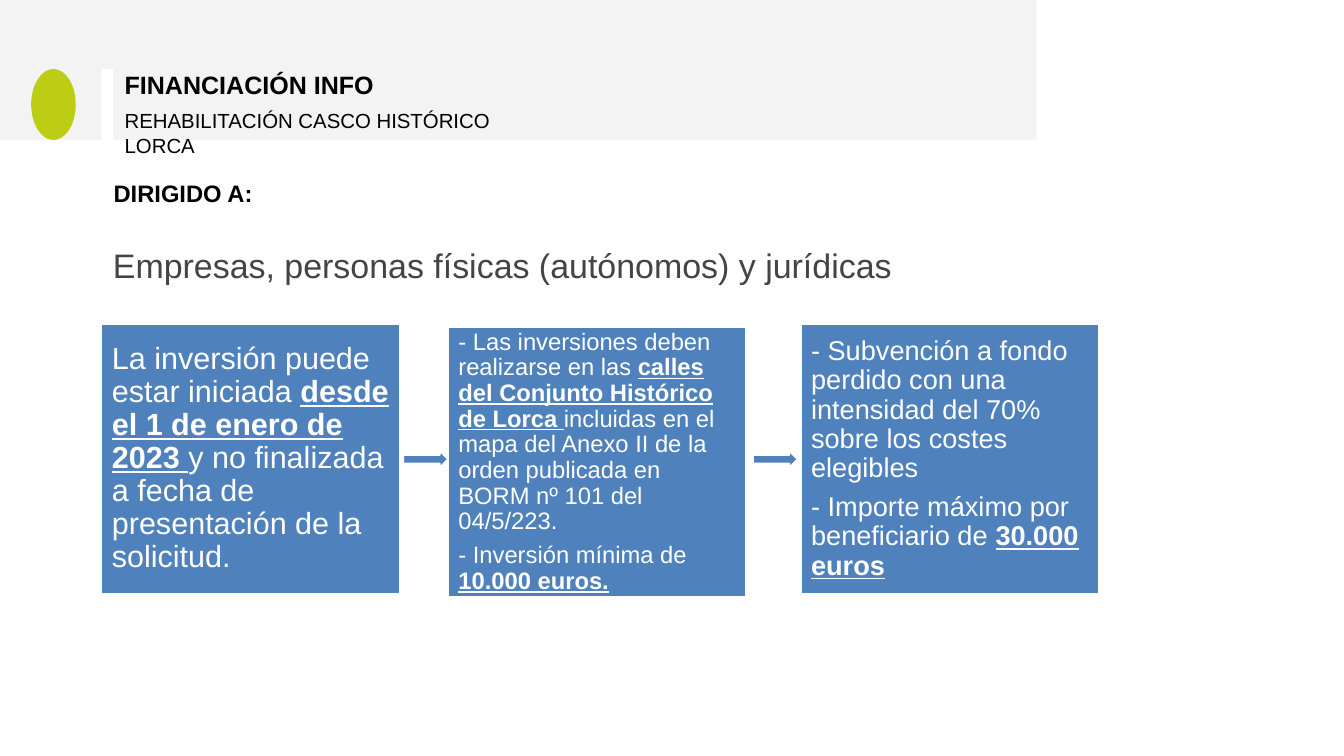
import pptx
import pptx.util
import pptx.dml.color
import pptx.enum.shapes
import pptx.enum.text

Inches, Pt = pptx.util.Inches, pptx.util.Pt
SHAPE = pptx.enum.shapes.MSO_SHAPE
ALIGN = pptx.enum.text.PP_ALIGN

THEME = {
    "font": "Arial",
    "band": "F3F3F3", "white": "FFFFFF", "lime": "BCCD13", "blue": "4F81BD",
    "black": "000000", "grey": "444444",
    "title": 29.5, "subtitle": 24, "heading": 28, "audience": 40,
}

prs = pptx.Presentation()
prs.slide_width, prs.slide_height = Inches(21.99), Inches(12.37)
s = prs.slides.add_slide(prs.slide_layouts[6])


def add_block(kind, left, top, width, height, fill, line=None):
    sp = s.shapes.add_shape(kind, *map(Inches, (left, top, width, height)))
    sp.shadow.inherit = False
    sp.fill.solid()
    sp.fill.fore_color.rgb = pptx.dml.color.RGBColor.from_string(THEME[fill])
    if line:
        sp.line.color.rgb = pptx.dml.color.RGBColor.from_string(THEME[line])
        sp.line.width = Pt(2)
    else:
        sp.line.fill.background()
    return sp


def write(tf, paragraphs, size, color, margins, bold=False, **paragraph_format):
    """Fill a text frame; text between asterisks is bold and underlined."""
    tf.word_wrap = True
    for side, margin in zip(("left", "top", "right", "bottom"), margins):
        setattr(tf, f"margin_{side}", Inches(margin))
    for i, text in enumerate(paragraphs):
        p = tf.paragraphs[0] if i == 0 else tf.add_paragraph()
        for name, value in paragraph_format.items():
            setattr(p, name, value)
        for j, part in enumerate(text.split("*")):
            if not part:
                continue
            r = p.add_run()
            r.text = part
            marked = j % 2 == 1
            for name, value in {"name": THEME["font"], "size": Pt(size),
                                "bold": bold or marked, "underline": marked}.items():
                setattr(r.font, name, value)
            r.font.color.rgb = pptx.dml.color.RGBColor.from_string(THEME[color])


# Header band with emblem and divider
BAND_BOTTOM, EMBLEM_TOP = 2.29, 1.13
emblem_height = BAND_BOTTOM - EMBLEM_TOP
add_block(SHAPE.RECTANGLE, 0, 0, 16.96, BAND_BOTTOM, "band")
add_block(SHAPE.OVAL, 0.51, EMBLEM_TOP, 0.73, emblem_height, "lime")
add_block(SHAPE.RECTANGLE, 1.66, EMBLEM_TOP, 0.19, emblem_height, "white")

# Headings
HEADER = (0.01, 0.02, 0, 0)
BODY = (0.1, 0.05, 0.1, 0.05)
headings = [
    ((2.03, 1.12, 5.78, 0.52), "FINANCIACIÓN INFO", "title", "black", HEADER, True,
     {"space_before": Pt(1.1)}),
    ((1.76, 2.88, 11.89, 0.57), "DIRIGIDO A:", "heading", "black", BODY, True, {}),
    ((2.03, 1.75, 6.63, 0.42), "REHABILITACIÓN CASCO HISTÓRICO LORCA", "subtitle",
     "black", HEADER, False, {"space_before": Pt(1.1)}),
    ((1.75, 4.39, 14.04, 0.42), "Empresas, personas físicas (autónomos) y jurídicas",
     "audience", "grey", BODY, False,
     {"alignment": ALIGN.JUSTIFY, "line_spacing": Pt(16.1), "space_before": Pt(4)}),
]
for box, text, size, color, margins, bold, paragraph_format in headings:
    tf = s.shapes.add_textbox(*map(Inches, box)).text_frame
    write(tf, [text], THEME[size], color, margins, bold, **paragraph_format)
    tf.auto_size = pptx.enum.text.MSO_AUTO_SIZE.SHAPE_TO_FIT_TEXT

# Flow of conditions
BOX_WIDTH, BOX_HEIGHT, BOX_MARGIN = 4.88, 4.42, 0.17
conditions = [
    (1.66, 5.3, 36, [
        "La inversión puede estar iniciada *desde el 1 de enero de 2023 *"
        "y no finalizada a fecha de presentación de la solicitud."]),
    (7.33, 5.35, 28, [
        "- Las inversiones deben realizarse en las *calles del Conjunto Histórico "
        "de Lorca *incluidas en el mapa del Anexo II de la orden publicada en "
        "BORM nº 101 del 04/5/223.",
        "- Inversión mínima de *10.000 euros.*"]),
    (13.1, 5.3, 32, [
        "- Subvención a fondo perdido con una intensidad del 70% sobre los costes "
        "elegibles",
        "- Importe máximo por beneficiario de *30.000 euros*"]),
]
for left, top, size, paragraphs in conditions:
    sp = add_block(SHAPE.RECTANGLE, left, top, BOX_WIDTH, BOX_HEIGHT, "blue", "white")
    tf = sp.text_frame
    tf.vertical_anchor = pptx.enum.text.MSO_ANCHOR.MIDDLE
    write(tf, paragraphs, size, "white", [BOX_MARGIN] * 4, alignment=ALIGN.LEFT,
          line_spacing=0.9, space_after=Pt(0.35 * size))

for left in (6.6, 12.32):
    add_block(SHAPE.RIGHT_ARROW, left, 7.38, 0.73, 0.27, "blue", "white")

prs.save("out.pptx")
